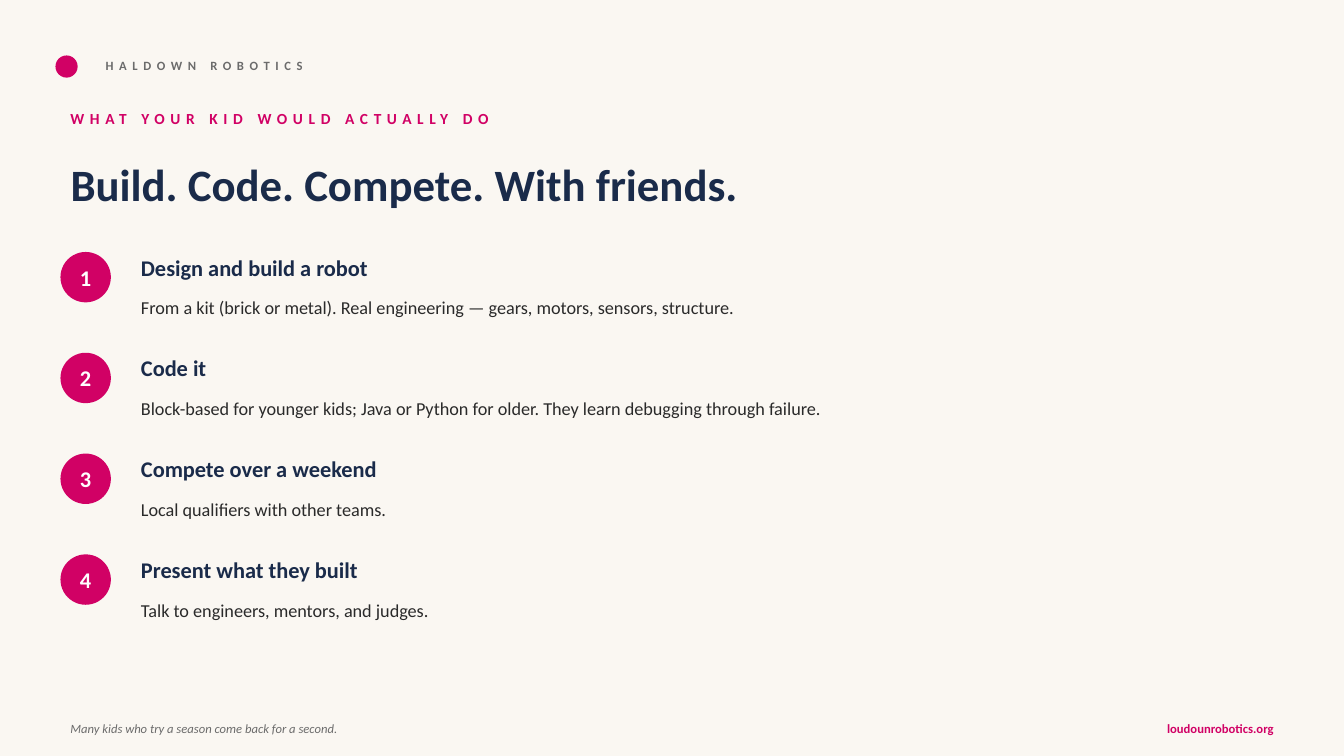
from pptx import Presentation
from pptx.dml.color import RGBColor
from pptx.enum.shapes import MSO_SHAPE
from pptx.enum.text import MSO_ANCHOR, MSO_AUTO_SIZE, PP_ALIGN
from pptx.util import Inches, Pt

CREAM = RGBColor(0xFA, 0xF7, 0xF2)
MAGENTA = RGBColor(0xD1, 0x01, 0x65)
NAVY = RGBColor(0x1A, 0x2B, 0x4A)
GRAY = RGBColor(0x6B, 0x6B, 0x6B)
INK = RGBColor(0x2A, 0x2A, 0x2A)
WHITE = RGBColor(0xFF, 0xFF, 0xFF)

FIRST_STEP_TOP = 2.5
STEP_PITCH = 1
STEPS = [
    ("Design and build a robot",
     "From a kit (brick or metal). Real engineering — gears, motors, sensors, structure."),
    ("Code it",
     "Block-based for younger kids; Java or Python for older. "
     "They learn debugging through failure."),
    ("Compete over a weekend", "Local qualifiers with other teams."),
    ("Present what they built", "Talk to engineers, mentors, and judges."),
]


def write(frame, text, *, size, color, bold=False, italic=False,
          align=PP_ALIGN.LEFT, anchor=MSO_ANCHOR.MIDDLE, spacing=None):
    """Fill a text frame with one formatted run; spacing is in points."""
    frame.word_wrap = True
    frame.auto_size = MSO_AUTO_SIZE.NONE
    frame.vertical_anchor = anchor
    paragraph = frame.paragraphs[0]
    paragraph.alignment = align
    run = paragraph.add_run()
    run.text = text
    font = run.font
    font.name = "Calibri"
    font.size = Pt(size)
    font.bold = bold
    font.italic = italic
    font.color.rgb = color
    if spacing:
        run._r.get_or_add_rPr().set("spc", str(spacing * 100))


def add_label(slide, text, left, top, width, height, **text_format):
    label = slide.shapes.add_textbox(
        Inches(left), Inches(top), Inches(width), Inches(height))
    write(label.text_frame, text, **text_format)


def add_dot(slide, left, top, diameter):
    dot = slide.shapes.add_shape(
        MSO_SHAPE.OVAL, Inches(left), Inches(top), Inches(diameter), Inches(diameter))
    dot.shadow.inherit = False
    dot.fill.solid()
    dot.fill.fore_color.rgb = MAGENTA
    dot.line.fill.background()
    return dot


def add_title(slide, text):
    title = slide.shapes.title
    title.left, title.top = Inches(0.6), Inches(1.5)
    title.width, title.height = Inches(12.13), Inches(1.15)
    write(title.text_frame, text, size=32, color=NAVY, bold=True, anchor=MSO_ANCHOR.TOP)


def add_step(slide, number, heading, detail, top):
    badge = add_dot(slide, 0.6, top, 0.5).text_frame
    badge.margin_left = badge.margin_right = badge.margin_top = badge.margin_bottom = 0
    write(badge, str(number), size=16, color=WHITE, bold=True, align=PP_ALIGN.CENTER)
    add_label(slide, heading, 1.3, top - 0.05, 8.5, 0.4, size=16, color=NAVY, bold=True)
    add_label(slide, detail, 1.3, top + 0.3, 8.5, 0.5, size=13, color=INK)


def main():
    deck = Presentation()
    deck.slide_width, deck.slide_height = Inches(13.33), Inches(7.5)
    slide = deck.slides.add_slide(deck.slide_layouts[5])
    slide.background.fill.solid()
    slide.background.fill.fore_color.rgb = CREAM

    add_dot(slide, 0.55, 0.55, 0.22)
    add_label(slide, "HALDOWN ROBOTICS", 0.95, 0.5, 5, 0.3,
              size=9, color=GRAY, bold=True, spacing=4)
    add_label(slide, "WHAT YOUR KID WOULD ACTUALLY DO", 0.6, 1, 8, 0.35,
              size=11, color=MAGENTA, bold=True, spacing=4)
    add_title(slide, "Build. Code. Compete. With friends.")

    for index, (heading, detail) in enumerate(STEPS):
        add_step(slide, index + 1, heading, detail, FIRST_STEP_TOP + index * STEP_PITCH)

    add_label(slide, "Many kids who try a season come back for a second.",
              0.6, 7.08, 12.13, 0.3, size=9, color=GRAY, italic=True)
    add_label(slide, "loudounrobotics.org", 10.33, 7.08, 2.4, 0.3,
              size=9, color=MAGENTA, bold=True, align=PP_ALIGN.RIGHT)

    deck.save("out.pptx")


if __name__ == "__main__":
    main()
